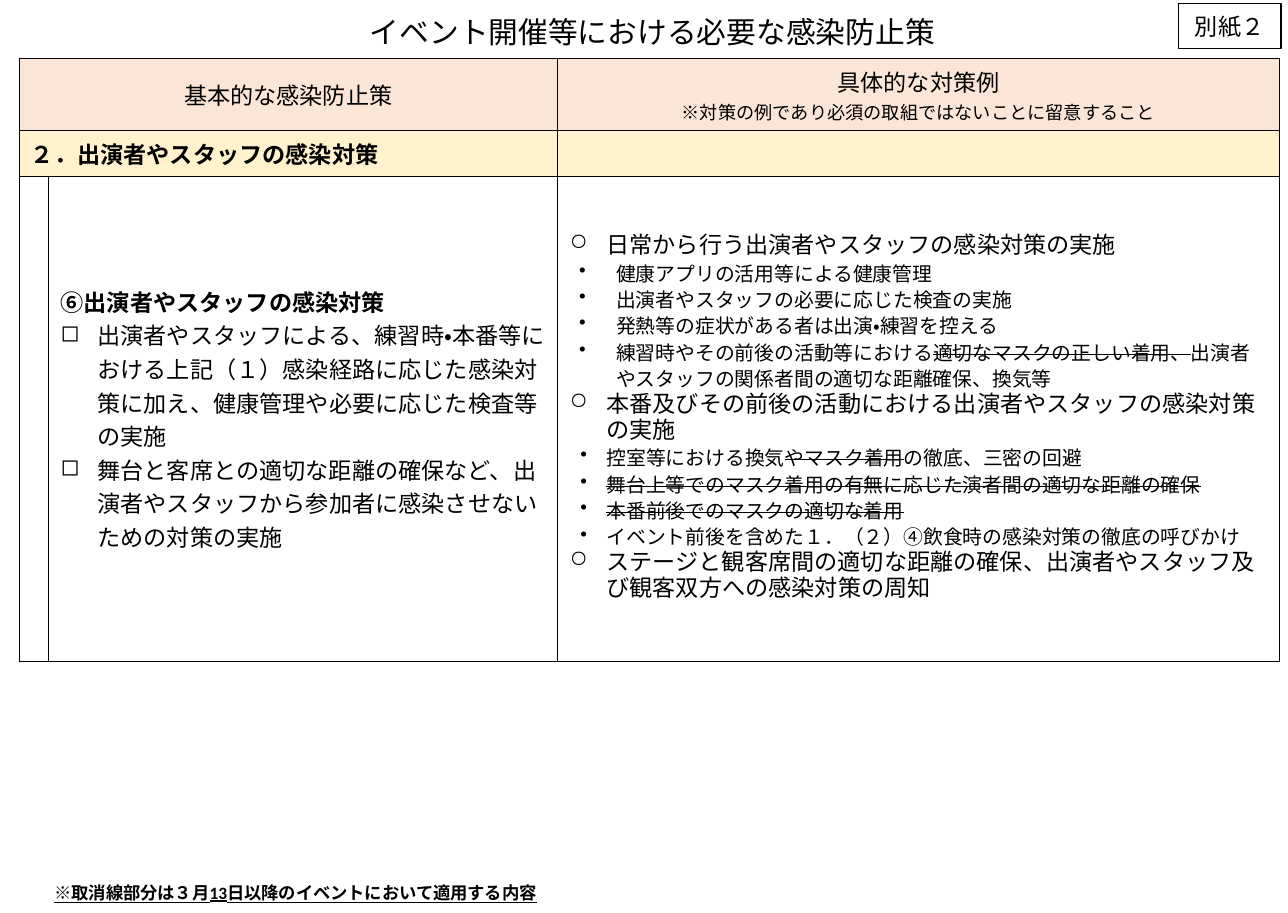
from pptx import Presentation
from pptx.dml.color import RGBColor
from pptx.enum.lang import MSO_LANGUAGE_ID
from pptx.enum.shapes import MSO_SHAPE
from pptx.enum.text import MSO_ANCHOR, PP_ALIGN
from pptx.oxml import parse_xml
from pptx.oxml.ns import nsdecls
from pptx.util import Pt

PX = 9144  # EMU per px, 100 px to the inch
COLORS = {"black": "000000", "white": "FFFFFF", "header": "FBE5D6", "section": "FFF2CC"}
FONT = "Calibri"

BASIC_MEASURES = [
    "出演者やスタッフによる、練習時・本番等における上記（１）感染経路に応じた感染対策に加え、"
    "健康管理や必要に応じた検査等の実施",
    "舞台と客席との適切な距離の確保など、出演者やスタッフから参加者に感染させないための対策の実施",
]

# (heading, left margin of its items, hanging indent of its items, items)
EXAMPLES = [
    ("日常から行う出演者やスタッフの感染対策の実施", 39, 31, [
        "健康アプリの活用等による健康管理",
        "出演者やスタッフの必要に応じた検査の実施",
        "発熱等の症状がある者は出演・練習を控える",
        "練習時やその前後の活動等における~適切なマスクの正しい着用、~"
        "出演者やスタッフの関係者間の適切な距離確保、換気等",
    ]),
    ("本番及びその前後の活動における出演者やスタッフの感染対策の実施", 31, 22, [
        "控室等における換気~やマスク着用~の徹底、三密の回避",
        "~舞台上等でのマスク着用の有無に応じた演者間の適切な距離の確保~",
        "~本番前後でのマスクの適切な着用~",
        "イベント前後を含めた１．（２）④飲食時の感染対策の徹底の呼びかけ",
    ]),
    ("ステージと観客席間の適切な距離の確保、出演者やスタッフ及び観客双方への感染対策の周知",
     31, 22, []),
]


def color(name):
    return RGBColor.from_string(COLORS[name])


def write(tf, text, size=14, bold=False, underline=False, align=PP_ALIGN.LEFT,
          margin=0, hang=0, bullet=None, spacing=None):
    """Add a paragraph; text between ~ marks is struck through."""
    first = tf.paragraphs[0]
    p = first if not first.runs else tf.add_paragraph()
    p.alignment = align
    if spacing:
        p.line_spacing = Pt(spacing)
    pPr = p._p.get_or_add_pPr()
    if margin:
        pPr.set("marL", str(margin * PX))
        pPr.set("indent", str(-hang * PX))
    if bullet:
        pPr.append(parse_xml(f'<a:buChar {nsdecls("a")} char="{bullet}"/>'))
    for i, part in enumerate(text.split("~")):
        if not part:
            continue
        r = p.add_run()
        r.text = part
        r.font.name = FONT
        r.font.size = Pt(size)
        r.font.bold = bold
        r.font.underline = underline
        r.font.color.rgb = color("black")
        r.font.language_id = MSO_LANGUAGE_ID.JAPANESE
        if i % 2:
            r._r.get_or_add_rPr().set("strike", "sngStrike")


class SlideBuilder:
    def __init__(self, prs):
        self.s = prs.slides.add_slide(prs.slide_layouts[6])

    def text(self, x, y, w, h, text, **fmt):
        tf = self.s.shapes.add_textbox(x * PX, y * PX, w * PX, h * PX).text_frame
        tf.word_wrap = True
        write(tf, text, **fmt)

    def box(self, x, y, w, h, text, **fmt):
        sp = self.s.shapes.add_shape(MSO_SHAPE.RECTANGLE, x * PX, y * PX, w * PX, h * PX)
        sp.shadow.inherit = False
        sp.fill.solid()
        sp.fill.fore_color.rgb = color("white")
        sp.line.color.rgb = color("black")
        sp.line.width = Pt(1)
        tf = sp.text_frame
        tf.vertical_anchor = MSO_ANCHOR.MIDDLE
        write(tf, text, **fmt)

    def table(self, x, y, cols, rows, fills):
        """Add a bordered table with one fill per row."""
        frame = self.s.shapes.add_table(len(rows), len(cols), x * PX, y * PX,
                                        sum(cols) * PX, sum(rows) * PX)
        table = frame.table
        for col, width in zip(table.columns, cols):
            col.width = width * PX
        for row, height, fill in zip(table.rows, rows, fills):
            row.height = height * PX
            for cell in row.cells:
                self.style_cell(cell, fill)
        return table

    def style_cell(self, cell, fill):
        cell.vertical_anchor = MSO_ANCHOR.MIDDLE
        cell.fill.solid()
        cell.fill.fore_color.rgb = color(fill)
        tcPr = cell._tc.get_or_add_tcPr()
        for i, side in enumerate("LRTB"):
            tcPr.insert(i, parse_xml(
                f'<a:ln{side} {nsdecls("a")} w="{Pt(0.5)}"><a:solidFill>'
                f'<a:srgbClr val="{COLORS["black"]}"/></a:solidFill></a:ln{side}>'))


def fill_table(table):
    for row in range(2):
        table.cell(row, 0).merge(table.cell(row, 1))
    write(table.cell(0, 0).text_frame, "基本的な感染防止策", align=PP_ALIGN.CENTER, spacing=20.3)
    head = table.cell(0, 2).text_frame
    write(head, "具体的な対策例", align=PP_ALIGN.CENTER, spacing=20.3)
    write(head, "※対策の例であり必須の取組ではないことに留意すること",
          size=11, align=PP_ALIGN.CENTER, spacing=16)
    write(table.cell(1, 0).text_frame, "２．出演者やスタッフの感染対策", bold=True, spacing=20.3)
    # A small end mark keeps the empty cell from stretching its row
    table.cell(1, 2).text_frame.paragraphs[0]._p.append(
        parse_xml(f'<a:endParaRPr {nsdecls("a")} sz="1200"/>'))

    table.cell(2, 1).margin_right = 0
    basic = table.cell(2, 1).text_frame
    write(basic, "⑥出演者やスタッフの感染対策", bold=True, margin=19, hang=19, spacing=20.3)
    for measure in BASIC_MEASURES:
        write(basic, measure, margin=31, hang=31, bullet="◻", spacing=20.3)

    examples = table.cell(2, 2).text_frame
    for heading, margin, hang, items in EXAMPLES:
        write(examples, heading, margin=31, hang=31, bullet="○", spacing=16)
        for item in items:
            write(examples, item, size=12, margin=margin, hang=hang, bullet="•", spacing=16)


def main():
    prs = Presentation()
    prs.slide_width = 1083 * PX
    prs.slide_height = 768 * PX
    slide = SlideBuilder(prs)
    table = slide.table(16, 49, cols=[25, 428, 607], rows=[61, 38, 408],
                        fills=["header", "section", "white"])
    fill_table(table)
    slide.text(7, 7, 1083, 40, "イベント開催等における必要な感染防止策",
               size=18, align=PP_ALIGN.CENTER)
    slide.box(991, 3, 86, 38, "別紙２", align=PP_ALIGN.CENTER)
    slide.text(36, 737, 554, 28, "※取消線部分は３月13日以降のイベントにおいて適用する内容",
               size=10.5, bold=True, underline=True)
    prs.save("out.pptx")


if __name__ == "__main__":
    main()
